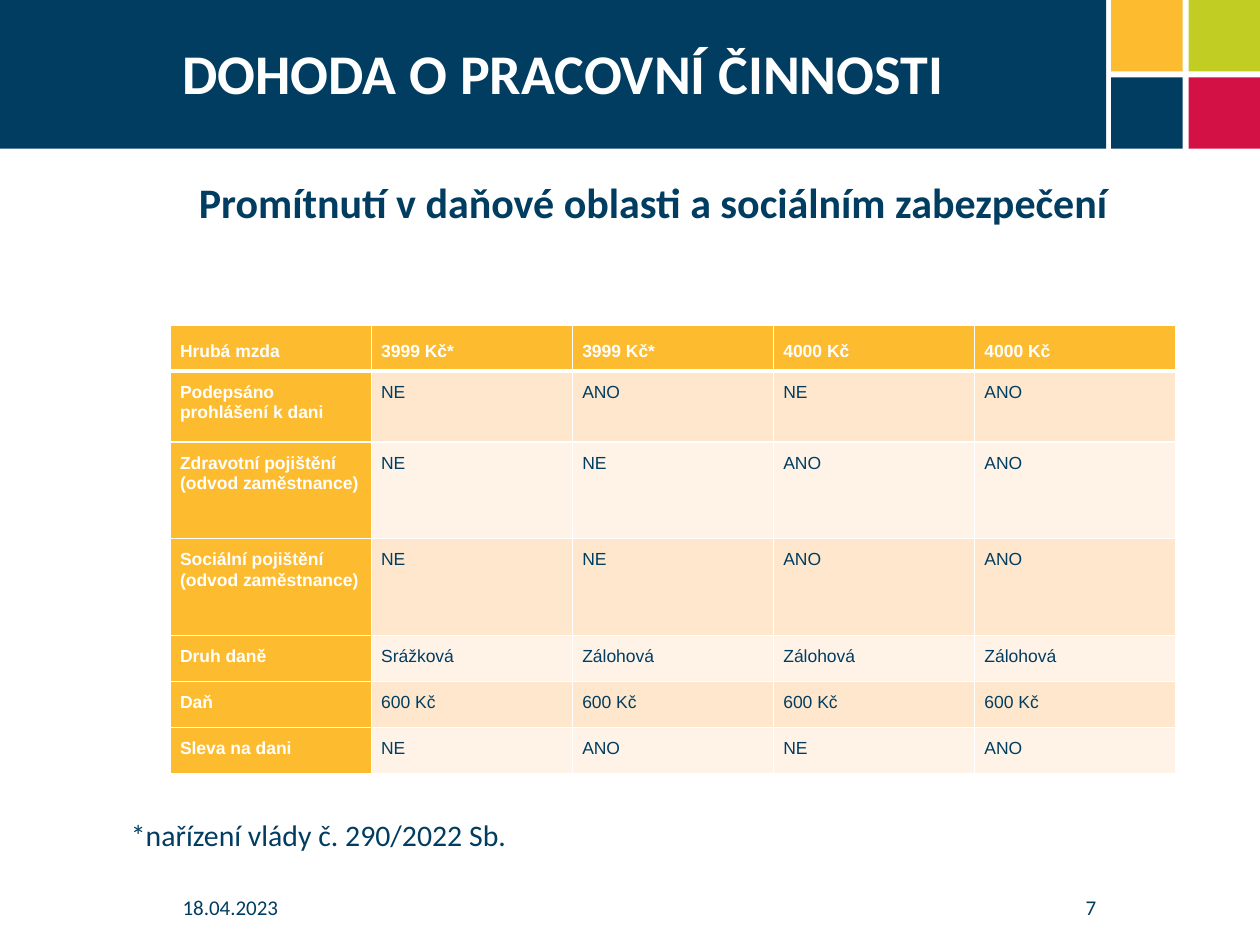
from lxml.etree import SubElement
from pptx import Presentation
from pptx.dml.color import RGBColor
from pptx.enum.shapes import MSO_SHAPE as Preset
from pptx.enum.text import MSO_ANCHOR as Anchor, PP_ALIGN as Align
from pptx.oxml.ns import qn
from pptx.util import Cm, Pt

NAVY, AMBER, LIME, CRIMSON, WHITE = "003D61", "FDBB30", "C2CD23", "D31145", "FFFFFF"
BANDS = ("FEE7CD", "FFF3E8")
ROW_HEIGHTS = (0.93, 1.43, 1.95, 1.95, 0.93, 0.93, 0.93)
ROWS = (
    ("Hrubá mzda", "3999 Kč*", "3999 Kč*", "4000 Kč", "4000 Kč"),
    ("Podepsáno prohlášení k dani", "NE", "ANO", "NE", "ANO"),
    ("Zdravotní pojištění (odvod zaměstnance)", "NE", "NE", "ANO", "ANO"),
    ("Sociální pojištění (odvod zaměstnance)", "NE", "NE", "ANO", "ANO"),
    ("Druh daně", "Srážková", "Zálohová", "Zálohová", "Zálohová"),
    ("Daň", "600 Kč", "600 Kč", "600 Kč", "600 Kč"),
    ("Sleva na dani", "NE", "ANO", "NE", "ANO"),
)


def color(value):
    """Turn a hex string into a colour."""
    return RGBColor.from_string(value)


def set_format(target, values):
    """Set every attribute named in a dict of format values."""
    for name, value in values.items():
        setattr(target, name, value)


def write(paragraph, text, size, fill, bold=False, font="Calibri", **layout):
    """Fill a paragraph with one formatted run."""
    run = paragraph.add_run()
    run.text = text
    set_format(run.font, {"name": font, "size": Pt(size), "bold": bold})
    run.font.color.rgb = color(fill)
    set_format(paragraph, layout)


def add_text_box(slide, box, anchor=Anchor.TOP):
    """Add a wrapping text box and return its text frame."""
    frame = slide.shapes.add_textbox(*map(Cm, box)).text_frame
    set_format(frame, {"word_wrap": True, "vertical_anchor": anchor})
    return frame


def add_block(slide, box, fill):
    """Add a plain rectangle without an outline."""
    shape = slide.shapes.add_shape(Preset.RECTANGLE, *map(Cm, box))
    shape.shadow.inherit = False
    shape.fill.solid()
    shape.fill.fore_color.rgb = color(fill)
    shape.line.fill.background()


def add_header(slide, box):
    """Place the banner, its title and the four corner squares."""
    left, top, width, height = box
    side, step = 1.44, 1.56
    corner = left + width - step - side
    add_block(slide, (left, top, corner - 0.1, height), NAVY)
    for index, fill in enumerate((AMBER, LIME, NAVY, CRIMSON)):
        row, column = divmod(index, 2)
        add_block(slide, (corner + column * step, top + row * step, side, side), fill)
    frame = add_text_box(slide, (left + 3.43, top, 18.87, 2.92), Anchor.MIDDLE)
    write(frame.paragraphs[0], "DOHODA O PRACOVNÍ ČINNOSTI", 32, WHITE, bold=True)


def add_body(slide, box):
    """Place the heading and, below the table area, the footnote."""
    frame = add_text_box(slide, box)
    write(frame.paragraphs[0], "Promítnutí v daňové oblasti a sociálním zabezpečení",
          24, NAVY, bold=True, alignment=Align.CENTER)
    write(frame.add_paragraph(), "*nařízení vlády č. 290/2022 Sb.", 17, NAVY,
          alignment=Align.JUSTIFY, space_before=Pt(337))


def add_border(cell, side, width):
    """Draw one white edge of a table cell."""
    line = SubElement(cell._tc.get_or_add_tcPr(), qn(f"a:ln{side}"), w=str(Pt(width)))
    SubElement(SubElement(line, qn("a:solidFill")), qn("a:srgbClr"), val=WHITE)


def format_cell(cell, text, row, column):
    """Write one cell in header or banded style."""
    is_label = row == 0 or column == 0
    margins = {f"margin_{side}": Cm(0.2) for side in ("left", "right", "top", "bottom")}
    anchor = Anchor.BOTTOM if row == 0 else Anchor.TOP
    set_format(cell, {**margins, "vertical_anchor": anchor})
    for side in "LRTB":
        is_header_edge = (row, side) in ((0, "B"), (1, "T"))
        add_border(cell, side, 3 if is_header_edge else 1)
    cell.fill.solid()
    cell.fill.fore_color.rgb = color(AMBER if is_label else BANDS[(row - 1) % 2])
    write(cell.text_frame.paragraphs[0], text, 10, WHITE if is_label else NAVY,
          bold=is_label, font="Arial", alignment=Align.LEFT, line_spacing=1.07)


def add_tax_table(slide, box):
    """Place the table of wages, insurance and tax."""
    frame = slide.shapes.add_table(len(ROWS), len(ROWS[0]), *map(Cm, box))
    table = frame.table
    for column in table.columns:
        column.width = Cm(box[2] / len(ROWS[0]))
    for row, (height, texts) in enumerate(zip(ROW_HEIGHTS, ROWS)):
        table.rows[row].height = Cm(height)
        for column, text in enumerate(texts):
            format_cell(table.cell(row, column), text, row, column)


def add_footer(slide, box):
    """Place the date on the left and the slide number on the right."""
    left, top, width, height = box
    date = add_text_box(slide, (left, top, 3.81, height), Anchor.BOTTOM)
    write(date.paragraphs[0], "18.04.2023", 12, NAVY)
    number = add_text_box(slide, (left + width - 5.1, top, 5.1, height), Anchor.BOTTOM)
    write(number.paragraphs[0], "7", 12, NAVY, alignment=Align.RIGHT)


def main():
    """Build the slide and save it."""
    presentation = Presentation()
    set_format(presentation, {"slide_width": Cm(25.4), "slide_height": Cm(19.05)})
    slide = presentation.slides.add_slide(presentation.slide_layouts[6])
    add_header(slide, (0, 0, 25.4, 3))
    add_body(slide, (2.39, 3.43, 21.56, 14.17))
    add_footer(slide, (3.43, 17.35, 18.92, 1.32))
    add_tax_table(slide, (3.43, 6.55, 20.27, sum(ROW_HEIGHTS)))
    presentation.save("out.pptx")


if __name__ == "__main__":
    main()
